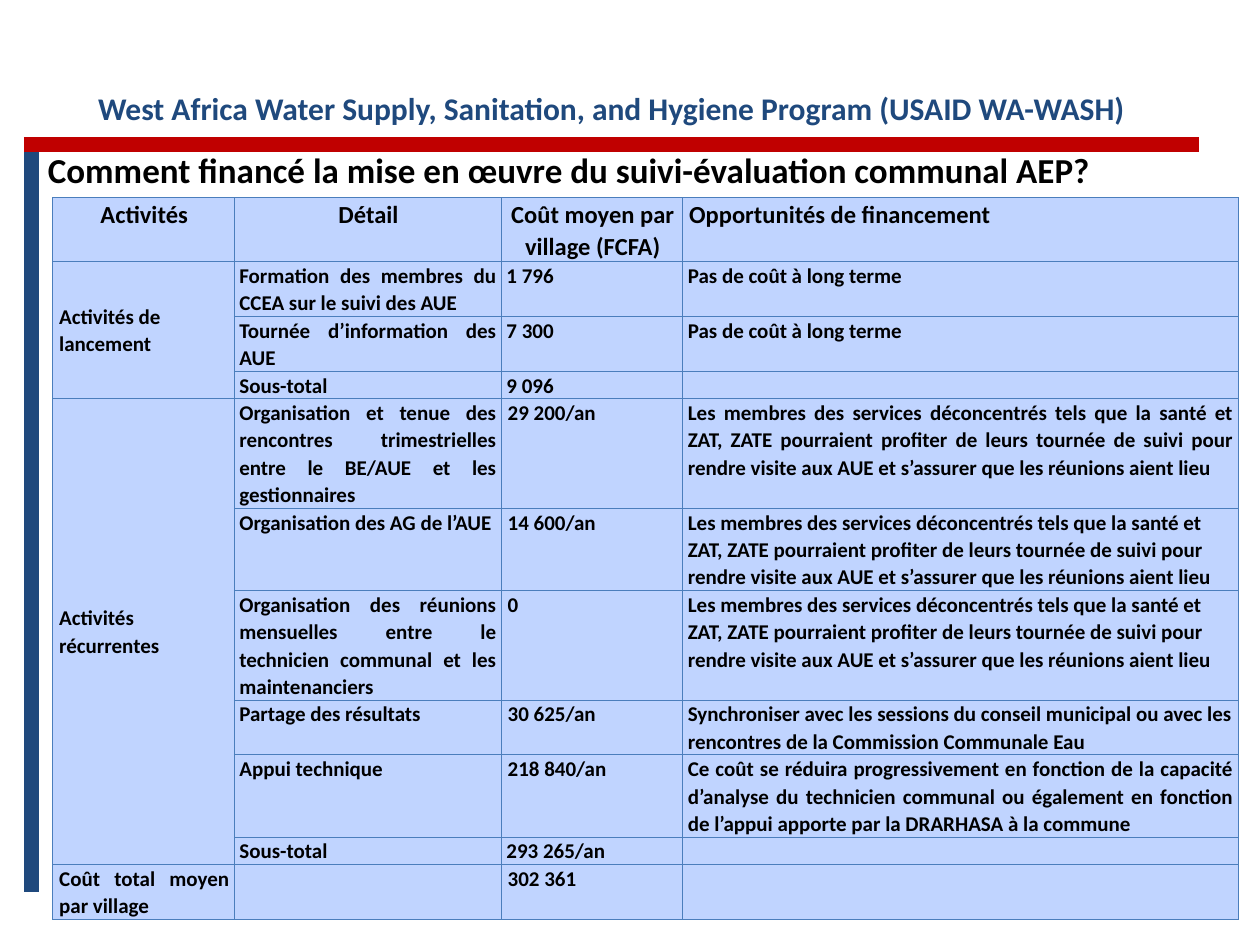
from lxml.etree import SubElement
from pptx import Presentation
from pptx.dml.color import RGBColor
from pptx.enum.shapes import MSO_CONNECTOR, MSO_SHAPE
from pptx.enum.text import MSO_ANCHOR, MSO_AUTO_SIZE, PP_ALIGN
from pptx.oxml.ns import qn
from pptx.util import Inches, Pt

HUES = {"ink": "000000", "navy": "1F497D", "red": "C00000",
        "white": "FFFFFF", "cell": "C0D4FF", "edge": "4B7EBC"}
COLS, ROWS = 100, 75
LEFT, MID, JUST = PP_ALIGN.LEFT, PP_ALIGN.CENTER, PP_ALIGN.JUSTIFY
SUB = "Sous-total"
VISIT = ("Les membres des services déconcentrés tels que la santé et ZAT, ZATE "
         "pourraient profiter de leurs tournée de suivi pour rendre visite aux AUE "
         "et s’assurer que les réunions aient lieu")
WIDTHS = [14.4, 21.2, 14.4, 44.1]
LINES = [2, 2, 2, 1, 4, 3, 4, 2, 3, 1, 2]
COSTS = [
    ("Activités", "Détail", "Coût moyen par village (FCFA)", "Opportunités de financement"),
    ("Activités de lancement", "Formation des membres du CCEA sur le suivi des AUE",
     "1 796", "Pas de coût à long terme"),
    ("", "Tournée d’information des AUE", "7 300", "Pas de coût à long terme"),
    ("", SUB, "9 096", ""),
    ("Activités récurrentes", "Organisation et tenue des rencontres trimestrielles "
     "entre le BE/AUE et les gestionnaires", "29 200/an", VISIT),
    ("", "Organisation des AG de l’AUE", "14 600/an", VISIT),
    ("", "Organisation des réunions mensuelles entre le technicien communal "
     "et les maintenanciers", "0", VISIT),
    ("", "Partage des résultats", "30 625/an", "Synchroniser avec les sessions du conseil "
     "municipal ou avec les rencontres de la Commission Communale Eau"),
    ("", "Appui technique", "218 840/an", "Ce coût se réduira progressivement en fonction "
     "de la capacité d’analyse du technicien communal ou également en fonction de l’appui "
     "apporte par la DRARHASA à la commune"),
    ("", SUB, "293 265/an", ""),
    ("Coût total moyen par village", "", "302 361", ""),
]
GROUPS = [(1, 3), (4, 9)]


def hue(name):
    return RGBColor.from_string(HUES[name])


def write(frame, text, size=12, tone="ink", align=LEFT, space=None, after=0, inset=0):
    para = frame.paragraphs[0]
    para.alignment = align
    para.space_before = Pt(0)
    para.space_after = Pt(after)
    if space:
        para.line_spacing = space
    if inset:
        para._p.get_or_add_pPr().set("marL", str(Inches(inset)))
    if not text:
        SubElement(para._p, qn("a:endParaRPr"), sz=str(size * 100))
        return
    run = para.add_run()
    run.text = text
    font = run.font
    font.name, font.size, font.bold = "Calibri", Pt(size), True
    font.color.rgb = hue(tone)


def style(row, col, line):
    if row == 0:
        return {"size": 14, "align": LEFT if col == 3 else MID, "inset": 0.01}
    loose = (col == 0 and row < len(COSTS) - 1) or (col == 3 and row in (5, 6, 7))
    deep = col == 0 or (col == 2 and row > 3 and line[1] != SUB)
    return {"align": LEFT if loose else JUST, "inset": 0.01 if deep else 0}


class Deck:
    def __init__(self):
        self.file = Presentation()
        self.file.slide_width, self.file.slide_height = Inches(10), Inches(7.5)
        self.slide = self.file.slides.add_slide(self.file.slide_layouts[5])

    def x(self, cols):
        return round(self.file.slide_width * cols / COLS)

    def y(self, rows):
        return round(self.file.slide_height * rows / ROWS)

    def area(self, left, top, wide, high):
        return self.x(left), self.y(top), self.x(wide), self.y(high)

    def rule(self, start, end, tone):
        line = self.slide.shapes.add_connector(
            MSO_CONNECTOR.STRAIGHT, *self.area(*start, *end))
        line.line.color.rgb = hue(tone)
        line.line.width = Pt(8.5)
        SubElement(line._element.spPr, qn("a:effectLst"))

    def banner(self, text, *spot):
        box = self.slide.shapes.add_shape(MSO_SHAPE.RECTANGLE, *self.area(*spot))
        box.shadow.inherit = False
        box.fill.solid()
        box.fill.fore_color.rgb = hue("white")
        box.line.fill.background()
        frame = box.text_frame
        frame.word_wrap, frame.vertical_anchor = True, MSO_ANCHOR.TOP
        frame.margin_left = frame.margin_right = Inches(0.04)
        frame.margin_top = frame.margin_bottom = Inches(0.04)
        write(frame, text, size=18, tone="navy", align=MID, after=16)

    def title(self, text, *spot):
        box = self.slide.shapes.title
        box.left, box.top, box.width, box.height = self.area(*spot)
        frame = box.text_frame
        frame.word_wrap, frame.vertical_anchor = True, MSO_ANCHOR.TOP
        frame.auto_size = MSO_AUTO_SIZE.NONE
        write(frame, text, size=20)

    def cell(self, cell):
        props = cell._tc.get_or_add_tcPr()
        for side in ("lnL", "lnR", "lnT", "lnB"):
            line = SubElement(props, qn("a:" + side), w=str(Pt(0.75)))
            fill = SubElement(line, qn("a:solidFill"))
            SubElement(fill, qn("a:srgbClr"), val=HUES["edge"])
        cell.fill.solid()
        cell.fill.fore_color.rgb = hue("cell")
        cell.margin_left = cell.margin_right = Inches(0.04)
        cell.margin_top = cell.margin_bottom = 0

    def table(self, data, left, top, unit):
        spot = self.area(left, top, sum(WIDTHS), unit * sum(LINES))
        grid = self.slide.shapes.add_table(len(data), len(WIDTHS), *spot).table
        grid.first_row = grid.horz_banding = False
        for col, wide in zip(grid.columns, WIDTHS):
            col.width = self.x(wide)
        for row, count in zip(grid.rows, LINES):
            row.height = self.y(unit * count)
        for r, line in enumerate(data):
            for c, text in enumerate(line):
                cell = grid.cell(r, c)
                self.cell(cell)
                write(cell.text_frame, text, space=1.07, after=8, **style(r, c, line))
        for first, last in GROUPS:
            head = grid.cell(first, 0)
            head.merge(grid.cell(last, 0))
            head.vertical_anchor = MSO_ANCHOR.MIDDLE


def main():
    deck = Deck()
    deck.rule((2.5, 11.7), (2.5, 70.8), "navy")
    deck.rule((1.9, 11.5), (95.2, 11.5), "red")
    deck.banner("West Africa Water Supply, Sanitation, and Hygiene Program (USAID WA-WASH)",
                3.4, 6.7, 90.3, 3.1)
    deck.title("Comment financé la mise en œuvre du suivi-évaluation communal AEP?",
               2.8, 11.3, 93.9, 4.4)
    deck.table(COSTS, 4.2, 15.7, 2.04)
    deck.file.save("out.pptx")


if __name__ == "__main__":
    main()
